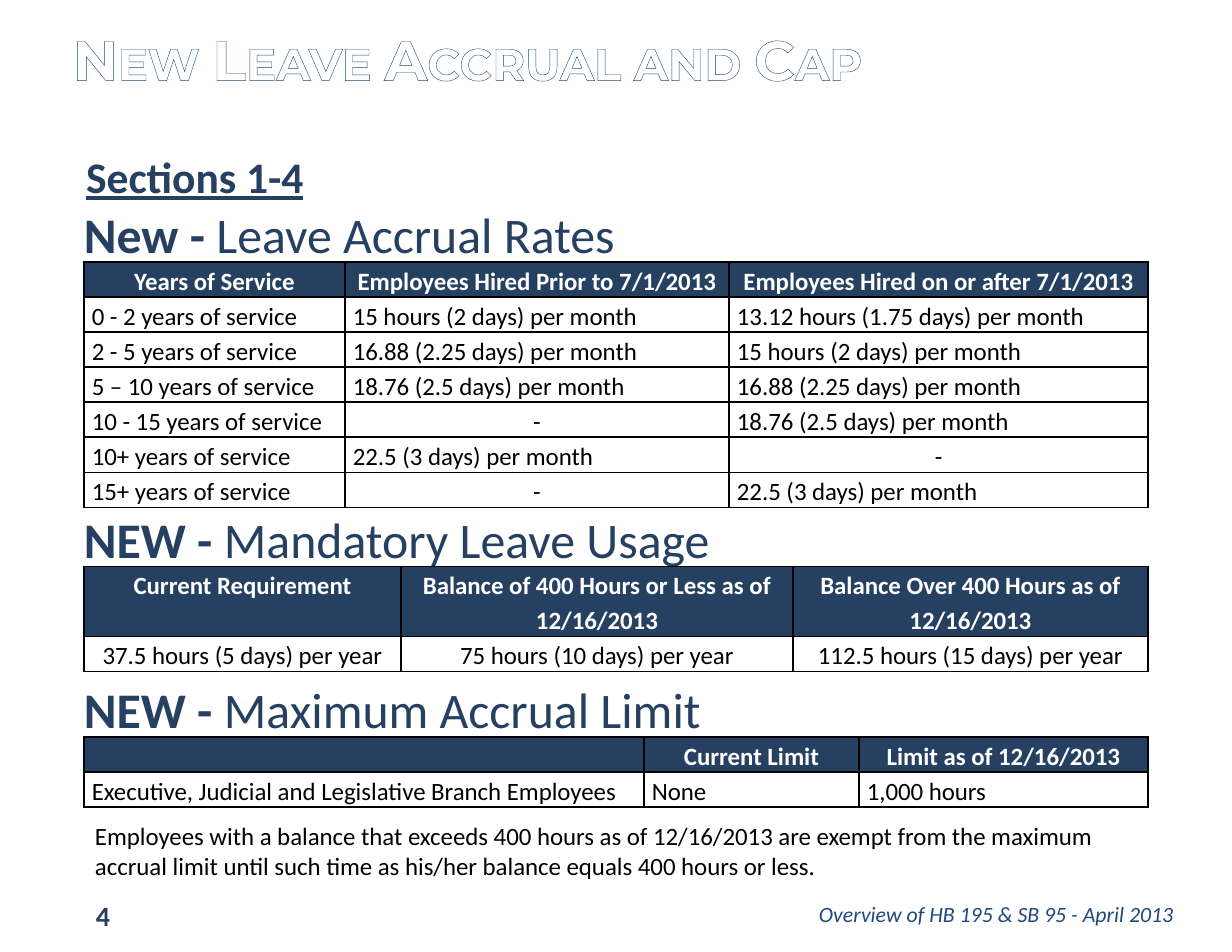
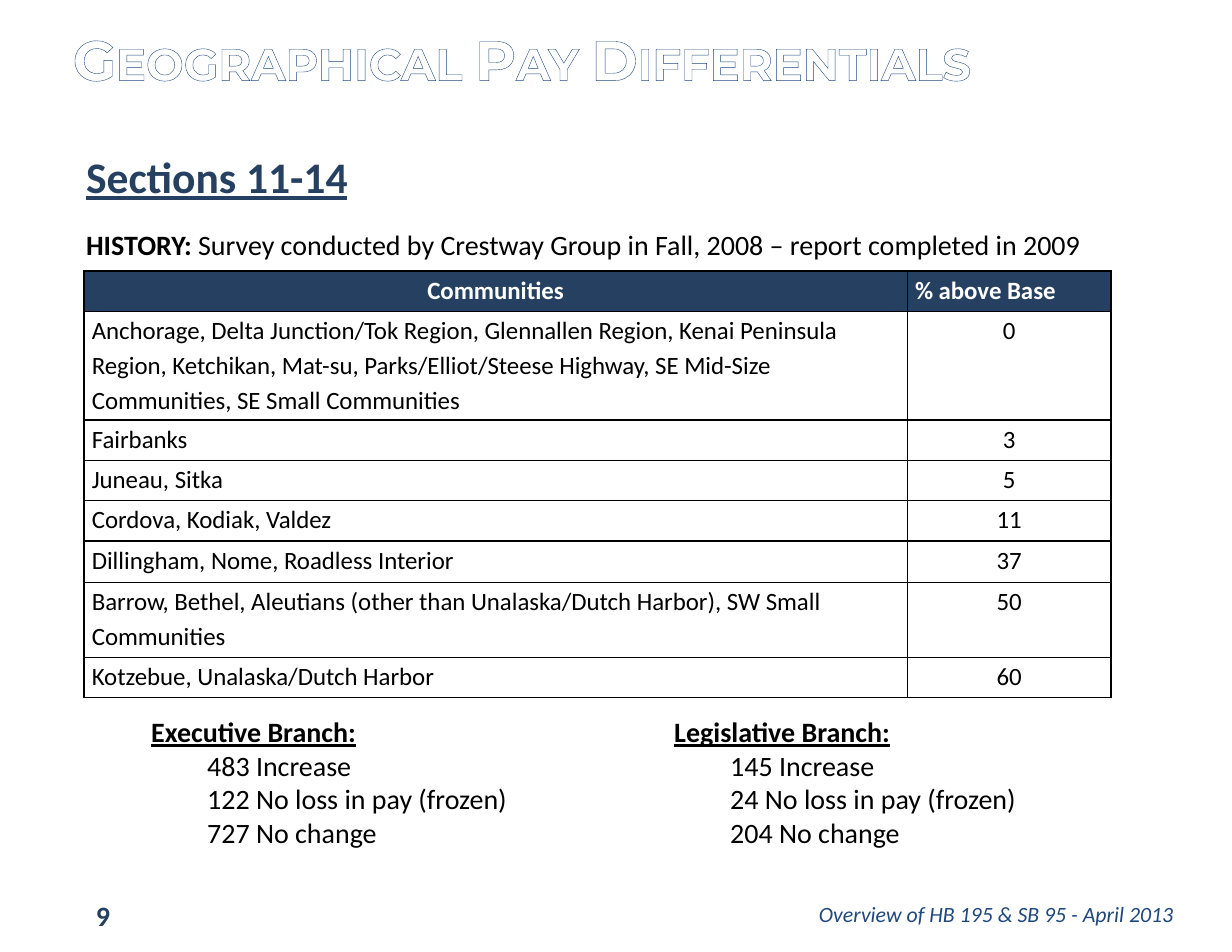
from typing import NamedTuple

from lxml.etree import SubElement
from pptx import Presentation
from pptx.dml.color import RGBColor
from pptx.enum.text import MSO_ANCHOR, MSO_AUTO_SIZE, PP_ALIGN
from pptx.oxml import parse_xml
from pptx.oxml.ns import nsdecls, qn
from pptx.util import Inches, Pt

NAVY = RGBColor(0x25, 0x40, 0x61)
BLUE = RGBColor(0x1F, 0x49, 0x7D)
WHITE = RGBColor(0xFF, 0xFF, 0xFF)
BLACK = RGBColor(0, 0, 0)

# The slide is a grid of 44 columns by 34 rows.
SLIDE_WIDTH, SLIDE_HEIGHT = Inches(11), Inches(8.5)
COLUMN, ROW = SLIDE_WIDTH / 44, SLIDE_HEIGHT / 34

TITLE = {"name": "Montserrat", "size": Pt(36), "bold": True, "color": WHITE}
SECTION = {"name": "Calibri", "size": Pt(28), "bold": True, "underline": True, "color": NAVY}
HEADING = {"name": "Calibri", "size": Pt(32), "bold": False, "color": NAVY}
NUMBER = {"name": "Calibri", "size": Pt(18), "bold": True, "color": NAVY}
FOOTER = {"name": "Calibri", "size": Pt(14), "italic": True, "color": BLUE}
BODY = {"name": "Calibri", "size": Pt(18), "bold": False, "color": BLACK}
CELL = {**BODY, "size": Pt(16)}
HEADER_CELL = {**CELL, "bold": True, "color": WHITE}

LEFT, CENTER, RIGHT = PP_ALIGN.LEFT, PP_ALIGN.CENTER, PP_ALIGN.RIGHT
TEXT_ROW = 1.22
HEADING_TO_TABLE = 2.28


class Box(NamedTuple):
    """A place on the slide, in grid columns and rows."""
    left: float
    top: float
    width: float
    height: float

    def emu(self):
        return (round(self.left * COLUMN), round(self.top * ROW),
                round(self.width * COLUMN), round(self.height * ROW))


def place(shape, box):
    shape.left, shape.top, shape.width, shape.height = box.emu()


def add_span(para, text, style):
    span = para.add_run()
    span.text = text
    for key, value in style.items():
        if key == "color":
            span.font.color.rgb = value
        else:
            setattr(span.font, key, value)
    return span


def set_frame(frame, anchor=MSO_ANCHOR.TOP):
    frame.word_wrap = True
    frame.auto_size = MSO_AUTO_SIZE.NONE
    frame.vertical_anchor = anchor


def add_text(page, box, spans, align=LEFT, anchor=MSO_ANCHOR.TOP):
    """Add one paragraph made of (text, style) spans."""
    frame = page.shapes.add_textbox(*box.emu()).text_frame
    set_frame(frame, anchor)
    para = frame.paragraphs[0]
    para.alignment = align
    for text, style in spans:
        add_span(para, text, style)


def add_title(page, text):
    title = page.shapes.title
    place(title, Box(2.2, 0.68, 39.6, 4.32))
    set_frame(title.text_frame)
    para = title.text_frame.paragraphs[0]
    para.alignment = LEFT
    properties = add_span(para, text, TITLE).font._element
    properties.set("cap", "small")
    properties.insert(0, parse_xml(
        f'<a:ln {nsdecls("a")} w="0"><a:solidFill><a:srgbClr val="{BLUE}"/>'
        "</a:solidFill></a:ln>"))


def add_page(deck, layout, title, section, number):
    """Add a slide with the title, section line, number and footer."""
    page = deck.slides.add_slide(deck.slide_layouts.get_by_name(layout))
    add_title(page, title)
    add_text(page, Box(2.68, 5.16, 38.72, 2.28), [(section, SECTION)])
    add_text(page, Box(1.12, 31.8, 5.12, 1.8), [(number, NUMBER)], CENTER, MSO_ANCHOR.MIDDLE)
    add_text(page, Box(6.96, 31.72, 35.36, 1.8),
             [("Overview of HB 195 & SB 95 - April 2013", FOOTER)], RIGHT, MSO_ANCHOR.MIDDLE)
    return page


def add_borders(cell):
    properties = cell._tc.get_or_add_tcPr()
    for side in ("lnL", "lnR", "lnT", "lnB"):
        properties.append(parse_xml(
            f'<a:{side} {nsdecls("a")} w="{Pt(1)}"><a:solidFill>'
            f'<a:srgbClr val="{BLACK}"/></a:solidFill></a:{side}>'))


def fill_cell(cell, text, align, is_header):
    add_borders(cell)
    cell.fill.solid()
    cell.fill.fore_color.rgb = NAVY if is_header else WHITE
    cell.margin_left = cell.margin_right = Inches(0.07)
    cell.margin_top = cell.margin_bottom = 0
    if text:
        para = cell.text_frame.paragraphs[0]
        para.alignment = align
        para.line_spacing = 1.15
        add_span(para, text, HEADER_CELL if is_header else CELL)


def add_grid(page, left, top, columns, heights, rows, aligns, header_aligns):
    """Add a table; a lone dash is centred in its cell."""
    box = Box(left, top, sum(columns), sum(heights))
    table = page.shapes.add_table(len(rows), len(columns), *box.emu()).table
    table.first_row = table.horz_banding = False
    for column, width in zip(table.columns, columns):
        column.width = round(width * COLUMN)
    for index, (row, height, texts) in enumerate(zip(table.rows, heights, rows)):
        row.height = round(height * ROW)
        row_aligns = header_aligns if index == 0 else aligns
        for cell, text, align in zip(row.cells, texts, row_aligns):
            fill_cell(cell, text, CENTER if text == "-" else align, index == 0)


def add_leave_block(page, top, label, topic, columns, rows, align=LEFT, header_lines=1):
    """Add a heading with its table below it."""
    add_text(page, Box(2.6, top, 25.72, 2.48),
             [(f"{label} - ", {**HEADING, "bold": True}), (topic, HEADING)])
    heights = [TEXT_ROW * header_lines] + [TEXT_ROW] * (len(rows) - 1)
    add_grid(page, 3, top + HEADING_TO_TABLE, columns, heights, rows,
             [align] * len(columns), [CENTER] * len(columns))


def fill_branch(holder, box, branch, counts):
    place(holder, box)
    frame = holder.text_frame
    set_frame(frame)
    for index, text in enumerate([branch, *counts]):
        para = frame.paragraphs[0] if index == 0 else frame.add_paragraph()
        properties = para._p.get_or_add_pPr()
        properties.set("marL", str(Inches(0.5) if index else 0))
        properties.set("indent", "0")
        SubElement(properties, qn("a:buNone"))
        para.space_before = Pt(0)
        is_heading = index == 0
        add_span(para, text, {**BODY, "bold": is_heading, "underline": is_heading})


def build_leave_page(deck):
    page = add_page(deck, "Title Only", "New Leave Accrual and Cap", "Sections 1-4", "4")
    add_leave_block(page, 7.08, "New", "Leave Accrual Rates", [9.32, 13.72, 14.96], [
        ("Years of Service", "Employees Hired Prior to 7/1/2013",
         "Employees Hired on or after 7/1/2013"),
        ("0 - 2 years of service", "15 hours (2 days) per month",
         "13.12 hours (1.75 days) per month"),
        ("2 - 5 years of service", "16.88 (2.25 days) per month", "15 hours (2 days) per month"),
        ("5 – 10 years of service", "18.76 (2.5 days) per month", "16.88 (2.25 days) per month"),
        ("10 - 15 years of service", "-", "18.76 (2.5 days) per month"),
        ("10+ years of service", "22.5 (3 days) per month", "-"),
        ("15+ years of service", "-", "22.5 (3 days) per month"),
    ])
    add_leave_block(page, 17.96, "NEW", "Mandatory Leave Usage", [11.32, 14, 12.68], [
        ("Current Requirement", "Balance of 400 Hours or Less as of 12/16/2013",
         "Balance Over 400 Hours as of 12/16/2013"),
        ("37.5 hours (5 days) per year", "75 hours (10 days) per year",
         "112.5 hours (15 days) per year"),
    ], CENTER, header_lines=2)
    add_leave_block(page, 24.04, "NEW", "Maximum Accrual Limit", [20, 7.68, 10.32], [
        ("", "Current Limit", "Limit as of 12/16/2013"),
        ("Executive, Judicial and Legislative Branch Employees", "None", "1,000 hours"),
    ])
    add_text(page, Box(3, 29.12, 38, 2.56), [(
        "Employees with a balance that exceeds 400 hours as of 12/16/2013 are exempt from the "
        "maximum accrual limit until such time as his/her balance equals 400 hours or less.",
        CELL)])


def build_pay_page(deck):
    page = add_page(deck, "Two Content", "Geographical Pay Differentials", "Sections 11-14", "9")
    add_text(page, Box(2.68, 7.92, 38.72, 1.6), [
        ("HISTORY: ", {**BODY, "bold": True}),
        ("Survey conducted by Crestway Group in Fall, 2008 – report completed in 2009", BODY)])
    heights = [1.44, 3.88, 1.44, 1.44, 1.44, 1.48, 2.68, 1.44]
    add_grid(page, 3, 9.68, [29.4, 7.28], heights, [
        ("Communities", "% above Base"),
        ("Anchorage, Delta Junction/Tok Region, Glennallen Region, Kenai Peninsula Region, "
         "Ketchikan, Mat-su, Parks/Elliot/Steese Highway, SE Mid-Size Communities, "
         "SE Small Communities", "0"),
        ("Fairbanks", "3"),
        ("Juneau, Sitka", "5"),
        ("Cordova, Kodiak, Valdez", "11"),
        ("Dillingham, Nome, Roadless Interior", "37"),
        ("Barrow, Bethel, Aleutians (other than Unalaska/Dutch Harbor), SW Small Communities",
         "50"),
        ("Kotzebue, Unalaska/Dutch Harbor", "60"),
    ], [LEFT, CENTER], [CENTER, LEFT])
    fill_branch(page.placeholders[1], Box(5, 25.32, 15, 5.24), "Executive Branch:",
                ["483 Increase", "122 No loss in pay (frozen)", "727 No change"])
    fill_branch(page.placeholders[2], Box(23.68, 25.32, 15, 5.24), "Legislative Branch:",
                ["145 Increase", "24 No loss in pay (frozen)", "204 No change"])


def main():
    deck = Presentation()
    deck.slide_width, deck.slide_height = SLIDE_WIDTH, SLIDE_HEIGHT
    build_leave_page(deck)
    build_pay_page(deck)
    deck.save("out.pptx")


if __name__ == "__main__":
    main()
